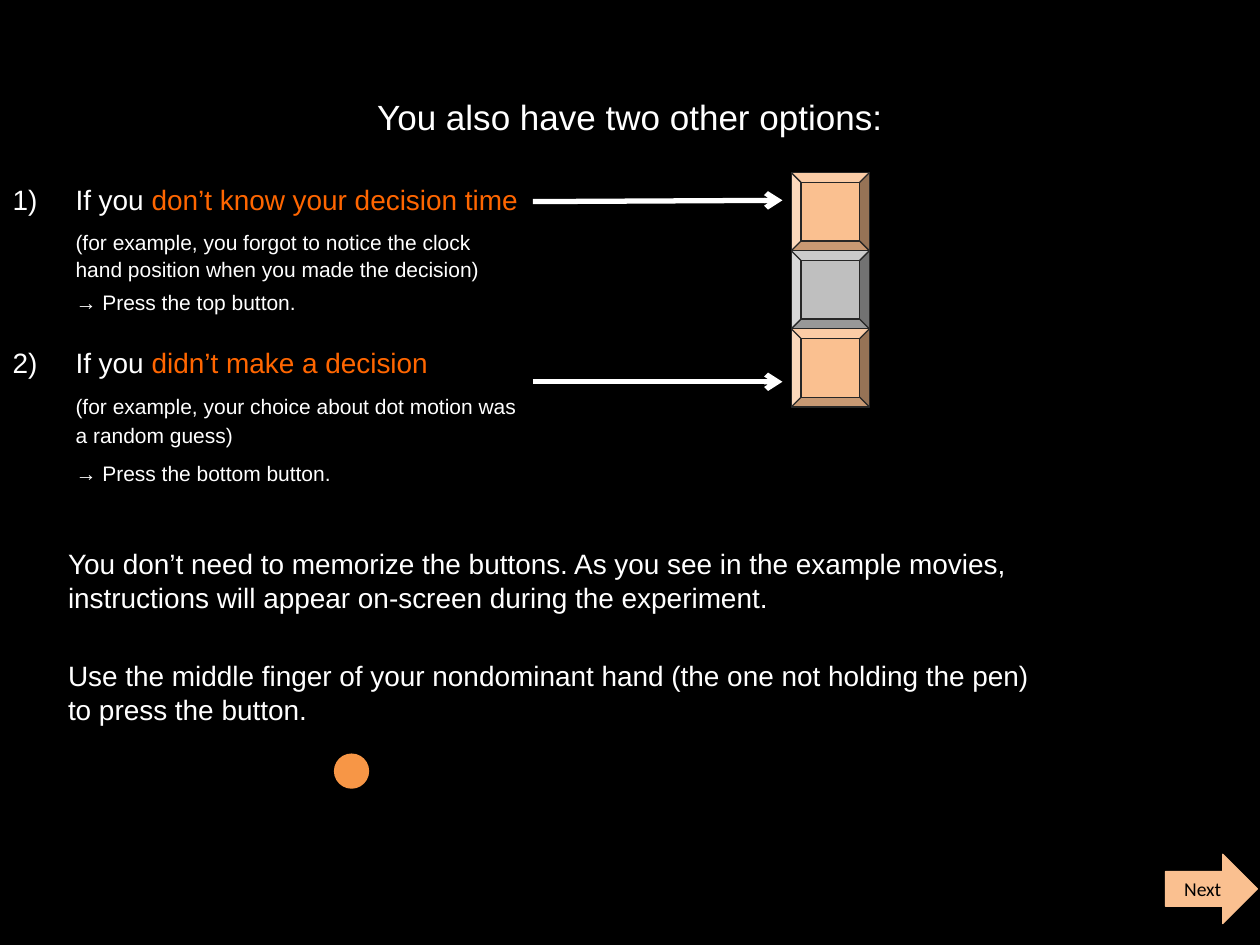
from pptx import Presentation
from pptx.dml.color import RGBColor
from pptx.enum.shapes import MSO_CONNECTOR as Line, MSO_SHAPE as Shape
from pptx.enum.text import MSO_ANCHOR as Anchor, PP_ALIGN as Align
from pptx.oxml.ns import qn
from pptx.util import Inches, Pt
from lxml.etree import SubElement

WHITE, BLACK, ORANGE, PEACH, GREY = "FFFFFF", "000000", "FF6600", "FAC090", "BFBFBF"
INDENT = 0.5


def colour(value):
    return RGBColor.from_string(value)


def apply(target, values):
    for name, value in values.items():
        setattr(target, name, value)


class Painter:
    font = "Arial"
    frame = dict(word_wrap=True, margin_left=0, margin_right=0,
                 margin_top=0, margin_bottom=0)

    def __init__(self, page):
        self.page = page
        page.background.fill.solid()
        page.background.fill.fore_color.rgb = colour(BLACK)

    def text(self, left, top, width, height):
        box = self.page.shapes.add_textbox(*map(Inches, (left, top, width, height)))
        apply(box.text_frame, self.frame)
        return box.text_frame

    def para(self, frame, spans, size, font=None, number=None, indent=0, **values):
        """Write one paragraph; spans holds (text, colour) pairs."""
        para = frame.paragraphs[0]
        if para.runs:
            para = frame.add_paragraph()
        apply(para, values)
        props = para._p.get_or_add_pPr()
        props.set("marL", str(Inches(indent)))
        props.set("indent", str(-Inches(indent) if number else 0))
        if number:
            SubElement(props, qn("a:buFont"), typeface=self.font)
            SubElement(props, qn("a:buAutoNum"), type="arabicParenR",
                       startAt=str(number))
        for words, ink in spans:
            for index, line in enumerate(words.split("\n")):
                if index:
                    para.add_line_break()
                span = para.add_run()
                span.text = line
                apply(span.font, dict(name=font or self.font, size=Pt(size)))
                span.font.color.rgb = colour(ink)

    def shape(self, kind, left, top, width, height, fill, line=None):
        shape = self.page.shapes.add_shape(
            kind, *map(Inches, (left, top, width, height)))
        shape.shadow.inherit = False
        shape.fill.solid()
        shape.fill.fore_color.rgb = colour(fill)
        if line:
            shape.line.color.rgb = colour(line)
            shape.line.width = Pt(0.75)
        else:
            shape.line.fill.background()
        return shape

    def arrow(self, *ends):
        arrow = self.page.shapes.add_connector(Line.STRAIGHT, *map(Inches, ends))
        arrow.line.color.rgb = colour(WHITE)
        arrow.line.width = Pt(3)
        SubElement(arrow.line._get_or_add_ln(), qn("a:tailEnd"), type="arrow")
        SubElement(arrow._element.spPr, qn("a:effectLst"))


def main():
    deck = Presentation()
    apply(deck, dict(slide_width=Inches(10), slide_height=Inches(7.5)))
    painter = Painter(deck.slides.add_slide(deck.slide_layouts[6]))

    # Title
    title = painter.text(0.1, 0.76, 9.8, 0.35)
    painter.para(title, [("You also have two other options:", WHITE)], 20,
                 alignment=Align.CENTER)

    # Numbered options: top, heading, detail, action, line pitch, gaps before
    options = [
        (1.45, "don’t know your decision time",
         "(for example, you forgot to notice the clock\n"
         "hand position when you made the decision)",
         "→ Press the top button.", 15.5, 6.5, 3),
        (2.74, "didn’t make a decision",
         "(for example, your choice about dot motion was\na random guess)",
         "→ Press the bottom button.", 17, 5.5, 4.5),
    ]
    for number, option in enumerate(options, 1):
        top, heading, detail, action, pitch, detail_gap, action_gap = option
        frame = painter.text(0.1, top, 4.3, 1.15)
        painter.para(frame, [("If you ", WHITE), (heading, ORANGE)], 16,
                     number=number, indent=INDENT)
        for words, gap in ((detail, detail_gap), (action, action_gap)):
            painter.para(frame, [(words, WHITE)], 12, indent=INDENT,
                         line_spacing=Pt(pitch), space_before=Pt(gap))

    # Closing notes
    notes = painter.text(0.54, 4.33, 9.2, 1.45)
    for words, gap in (
        ("You don’t need to memorize the buttons. As you see in the example movies,\n"
         "instructions will appear on-screen during the experiment.", 0),
        ("Use the middle finger of your nondominant hand (the one not holding the pen)\n"
         "to press the button.", 25),
    ):
        painter.para(notes, [(words, WHITE)], 16, line_spacing=Pt(19.5),
                     space_before=Pt(gap))

    # Button stack
    side = 0.62
    for row, fill in enumerate((PEACH, GREY, PEACH)):
        painter.shape(Shape.BEVEL, 6.28, 1.37 + row * side, side, side, fill, "262626")

    # Arrows from the options to their buttons
    painter.arrow(4.23, 1.6, 6.21, 1.59)
    painter.arrow(4.23, 3.03, 6.21, 3.03)

    # Dot and Next button
    painter.shape(Shape.OVAL, 2.65, 5.98, 0.28, 0.28, "F79646")
    button = painter.shape(Shape.RIGHT_ARROW, 9.25, 6.78, 0.73, 0.55, PEACH, PEACH)
    apply(button.text_frame, {**painter.frame, "word_wrap": False,
                              "vertical_anchor": Anchor.MIDDLE})
    painter.para(button.text_frame, [("Next", BLACK)], 11.2, font="Calibri",
                 alignment=Align.CENTER)

    deck.save("out.pptx")


if __name__ == "__main__":
    main()
